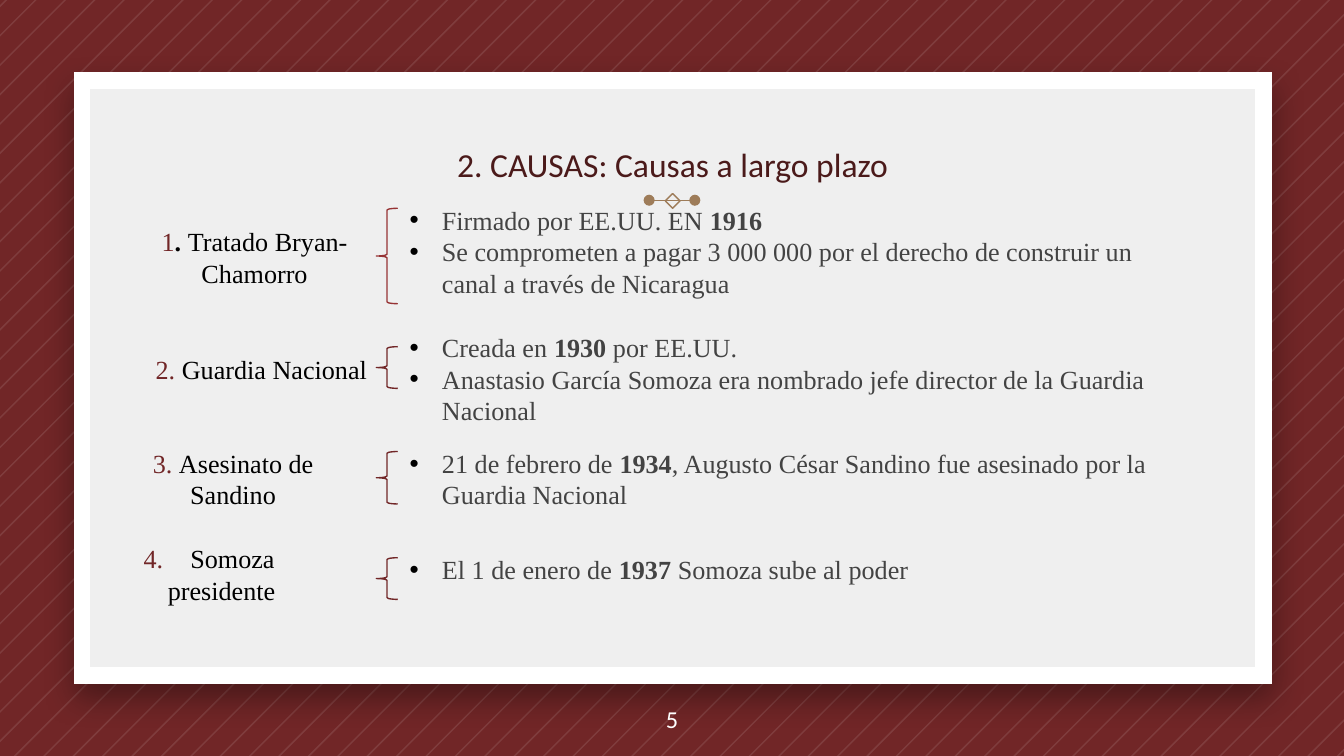
from lxml import etree
from pptx import Presentation
from pptx.dml.color import RGBColor
from pptx.enum import shapes as kinds, text as layout
from pptx.oxml import parse_xml
from pptx.oxml.ns import qn
from pptx.util import Inches, Pt

WIDTH = 10
HEIGHT = WIDTH * 9 / 16
WINE = RGBColor(0x71, 0x26, 0x27)
RED = RGBColor(0x96, 0x33, 0x34)
MAROON = RGBColor(0x4B, 0x1A, 0x1A)
TAN = RGBColor(0x9E, 0x7C, 0x59)
PAPER = RGBColor(0xEF, 0xEF, 0xEF)
GREY = RGBColor(0x43, 0x43, 0x43)
BLACK = RGBColor(0, 0, 0)
WHITE = RGBColor(0xFF, 0xFF, 0xFF)
HEADING, BODY = "Calibri", "Times New Roman"
CENTER, LEFT = layout.PP_ALIGN.CENTER, layout.PP_ALIGN.LEFT

# Content: runs are (text, bold) in the facts and (text, colour, bold) in the labels
TITLE = "2. CAUSAS: Causas a largo plazo"
PAGE = "5"
CAUSES = [
    {"label": [("1", WINE, False), (". ", BLACK, True), ("Tratado Bryan-Chamorro", BLACK, False)],
     "label_box": (0.83, 1.63, 2.13, 0.57), "align": CENTER,
     "brace": (1.55, 0.71, RED), "facts_box": (1.47, 5.83, 0.81),
     "facts": [[("Firmado por EE.UU. EN ", False), ("1916", True)],
               [("Se comprometen a pagar 3 000 000 por el derecho de construir un "
                 "canal a través de Nicaragua", False)]]},
    {"label": [("2. ", WINE, False), ("Guardia Nacional", BLACK, False)],
     "label_box": (1.06, 2.58, 2.2, 0.34), "align": LEFT,
     "brace": (2.58, 0.31, WINE), "facts_box": (2.42, 6.3, 0.57),
     "facts": [[("Creada en ", False), ("1930 ", True), ("por EE.UU.", False)],
               [("Anastasio García Somoza era nombrado jefe director de la Guardia "
                 "Nacional", False)]]},
    {"label": [("3. ", WINE, False), ("Asesinato de Sandino", BLACK, False)],
     "label_box": (0.75, 3.28, 1.97, 0.57), "align": CENTER,
     "brace": (3.36, 0.39, WINE), "facts_box": (3.28, 5.75, 0.57),
     "facts": [[("21 de febrero de ", False), ("1934", True),
                (", Augusto César Sandino fue asesinado por la Guardia Nacional", False)]]},
    {"label": [("4.", WINE, False), (" ", WINE, False), ("Somoza presidente", BLACK, False)],
     "label_box": (0.83, 3.99, 1.65, 0.57), "align": LEFT,
     "brace": (4.15, 0.31, WINE), "facts_box": (4.07, 4.65, 0.34),
     "facts": [[("El 1 de enero de ", False), ("1937", True), (" Somoza sube al poder", False)]]},
]
BRACE_LEFT, BRACE_WIDTH = 2.8, 0.16
FACTS_LEFT, BULLET_INDENT = 2.95, 0.24

# Background stripes: diagonals x + y = constant
STRIPE_START, STRIPE_PITCH, STRIPE_WIDTH, STRIPE_COUNT = 0.04, 7 / 32, 1 / 64, 72

presentation = Presentation()
presentation.slide_width, presentation.slide_height = Inches(WIDTH), Inches(HEIGHT)
slide = presentation.slides.add_slide(presentation.slide_layouts[6])
slide.background.fill.solid()
slide.background.fill.fore_color.rgb = WINE


def inches(*values):
    return [Inches(value) for value in values]


def add_outline(kind, box, color, weight):
    shape = slide.shapes.add_shape(kind, *inches(*box))
    shape.shadow.inherit = False
    shape.fill.background()
    shape.line.color.rgb = color
    shape.line.width = Pt(weight)
    return shape


def add_text(box, anchor=layout.MSO_ANCHOR.TOP, inset=0.05):
    frame = slide.shapes.add_textbox(*inches(*box)).text_frame
    frame.word_wrap = True
    frame.vertical_anchor = anchor
    frame.margin_top = frame.margin_bottom = Inches(inset)
    return frame


def style(paragraph, font, size, color=None, align=LEFT):
    paragraph.alignment = align
    paragraph.font.name, paragraph.font.size = font, Pt(size)
    if color is not None:
        paragraph.font.color.rgb = color


def add_run(paragraph, words, bold):
    run = paragraph.add_run()
    run.text = words
    if bold:
        run.font.bold = True
    return run


def set_indent(paragraph, margin, first_line):
    properties = paragraph._p.get_or_add_pPr()
    properties.set("marL", str(Inches(margin)))
    properties.set("indent", str(Inches(first_line)))
    return properties


def add_bullet(paragraph):
    properties = set_indent(paragraph, BULLET_INDENT, -BULLET_INDENT)
    bullet = [etree.Element(qn(tag)) for tag in ("a:buClr", "a:buFont", "a:buChar")]
    etree.SubElement(bullet[0], qn("a:srgbClr"), val=str(BLACK))
    bullet[1].set("typeface", "Arial")
    bullet[2].set("char", "•")
    for position, element in enumerate(bullet):
        properties.insert(position, element)


def diagonal(total):
    """Ends of x + y = total, cut at the slide's edges."""
    return [inches(min(total, WIDTH), max(0, total - WIDTH)),
            inches(max(0, total - HEIGHT), min(total, HEIGHT))]


# Stripes
stripes = []
for index in range(STRIPE_COUNT):
    total = STRIPE_START + index * STRIPE_PITCH
    stripes.append(diagonal(total) + diagonal(total + STRIPE_WIDTH)[::-1])
builder = slide.shapes.build_freeform(*stripes[0][0])
for stripe in stripes:
    builder.move_to(*stripe[0])
    builder.add_line_segments(stripe[1:], close=True)
pattern = builder.convert_to_shape()
pattern.shadow.inherit = False
pattern.line.fill.background()
pattern.fill.solid()
pattern.fill.fore_color.rgb = WHITE
pattern_color = pattern._element.spPr.find(qn("a:solidFill"))[0]
etree.SubElement(pattern_color, qn("a:alpha"), val="10000")

# Card with soft shadow
card = add_outline(kinds.MSO_SHAPE.RECTANGLE, (0.61, 0.6, 8.79, 4.43), WHITE, 9)
card.fill.solid()
card.fill.fore_color.rgb = PAPER
etree.SubElement(card.line._get_or_add_ln(), qn("a:miter"), lim="800000")
card._element.spPr.find(qn("a:effectLst")).append(parse_xml(
    '<a:outerShdw xmlns:a="http://schemas.openxmlformats.org/drawingml/2006/main" '
    f'blurRad="{Pt(16.9)}" dist="{Pt(7.5)}" dir="5400000" algn="t" rotWithShape="0">'
    '<a:srgbClr val="000000"><a:alpha val="35000"/></a:srgbClr></a:outerShdw>'))

# Ornament under the title
rule = slide.shapes.add_connector(kinds.MSO_CONNECTOR.STRAIGHT, *inches(4.83, 1.49, 5.17, 1.49))
rule.line.color.rgb = TAN
rule.line.width = Pt(0.75)
for end in ("a:headEnd", "a:tailEnd"):
    etree.SubElement(rule.line._get_or_add_ln(), qn(end), type="oval")
etree.SubElement(rule._element.spPr, qn("a:effectLst"))
add_outline(kinds.MSO_SHAPE.DIAMOND, (4.95, 1.44, 0.11, 0.11), TAN, 0.75)

# Title and page number
for words, box, anchor, size, color in (
        (TITLE, (0.99, 0.81, 8.03, 0.66), layout.MSO_ANCHOR.BOTTOM, 18, MAROON),
        (PAGE, (0, 5.08, WIDTH, 0.54), layout.MSO_ANCHOR.MIDDLE, 13, WHITE)):
    paragraph = add_text(box, anchor, 0.1).paragraphs[0]
    paragraph.text = words
    style(paragraph, HEADING, size, color, CENTER)

# Causes: label, brace, facts
for cause in CAUSES:
    label = add_text(cause["label_box"]).paragraphs[0]
    style(label, BODY, 14, align=cause["align"])
    for words, color, bold in cause["label"]:
        add_run(label, words, bold).font.color.rgb = color

    top, height, color = cause["brace"]
    add_outline(kinds.MSO_SHAPE.LEFT_BRACE, (BRACE_LEFT, top, BRACE_WIDTH, height), color, 0.75)

    top, width, height = cause["facts_box"]
    frame = add_text((FACTS_LEFT, top, width, height))
    for index, fact in enumerate(cause["facts"]):
        paragraph = frame.add_paragraph() if index else frame.paragraphs[0]
        style(paragraph, BODY, 14, GREY)
        add_bullet(paragraph)
        for words, bold in fact:
            add_run(paragraph, words, bold)

# The last label hangs its number, with a wide gap after it
set_indent(label, 0.32, -0.18)
label.runs[1].font._element.set("spc", "1100")

presentation.save("out.pptx")
